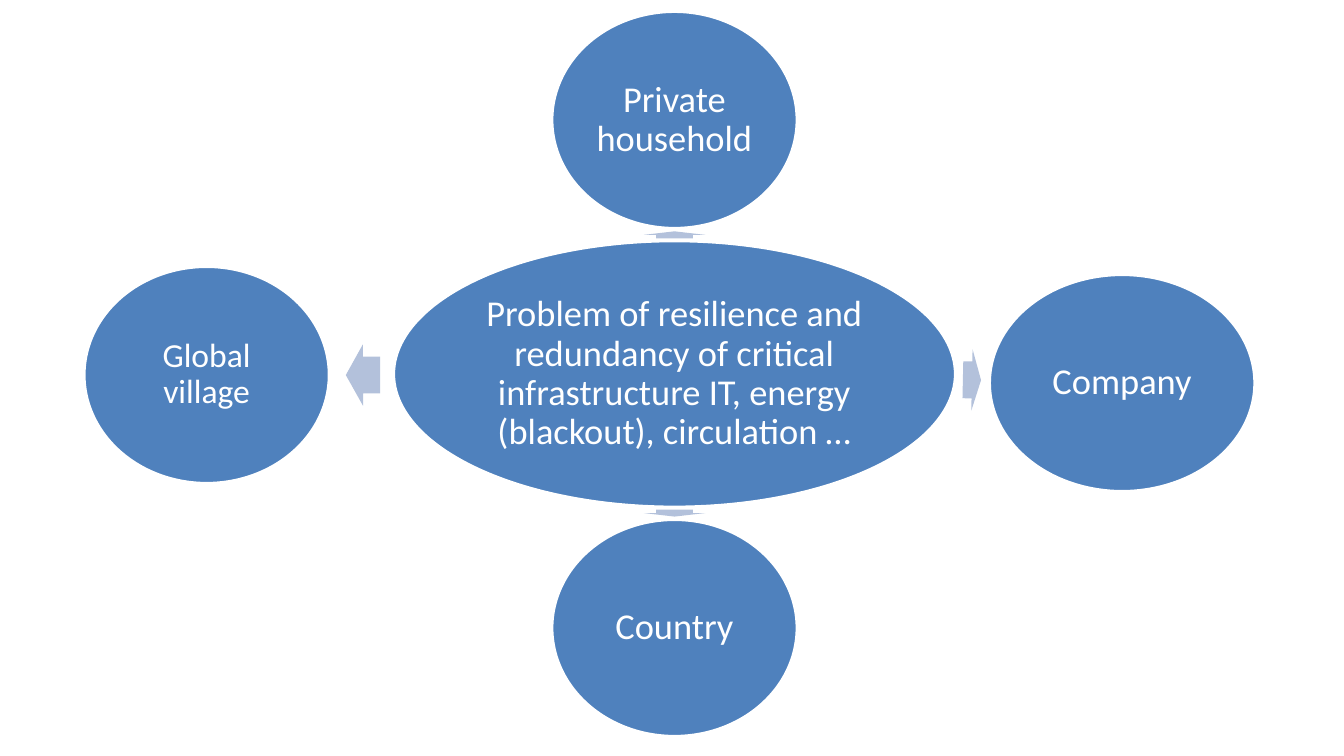
import dataclasses
import pptx
import pptx.util
import pptx.dml.color
import pptx.enum.shapes
import pptx.enum.text

Inches = pptx.util.Inches
Pt = pptx.util.Pt
Kind = pptx.enum.shapes.MSO_SHAPE


@dataclasses.dataclass(frozen=True)
class Theme:
    """Colours, font and type sizes of the slide."""
    blue: str = "4F81BD"
    pale: str = "B3C1DB"
    white: str = "FFFFFF"
    font: str = "Calibri"
    large: int = 26
    small: int = 24


THEME = Theme()


def paint(part, tone):
    """Fill a shape with a plain colour and drop its shadow."""
    part.shadow.inherit = False
    part.fill.solid()
    part.fill.fore_color.rgb = pptx.dml.color.RGBColor.from_string(tone)


def place(slide, kind, box):
    """Add a preset shape in a box given as centre x, centre y, width, height."""
    x, y, wide, high = box
    return slide.shapes.add_shape(
        kind, Inches(x - wide / 2), Inches(y - high / 2), Inches(wide), Inches(high))


def draw_node(slide, box, label, size=THEME.large):
    """Draw a labelled ellipse."""
    node = place(slide, Kind.OVAL, box)
    paint(node, THEME.blue)
    white = pptx.dml.color.RGBColor.from_string(THEME.white)
    node.line.color.rgb = white
    node.line.width = Pt(2)
    frame = node.text_frame
    frame.word_wrap = True
    frame.vertical_anchor = pptx.enum.text.MSO_ANCHOR.MIDDLE
    frame.margin_left = frame.margin_right = Inches(0.04)
    frame.margin_top = frame.margin_bottom = Inches(0.04)
    frame.text = label
    para = frame.paragraphs[0]
    para.alignment = pptx.enum.text.PP_ALIGN.CENTER
    para.line_spacing = 0.9
    font = para.runs[0].font
    font.name = THEME.font
    font.size = Pt(size)
    font.color.rgb = white


def draw_arrow(slide, box, turn):
    """Draw a pale block arrow turned clockwise from pointing right."""
    arrow = place(slide, Kind.RIGHT_ARROW, box)
    paint(arrow, THEME.pale)
    arrow.line.fill.background()
    arrow.adjustments[0] = 0.6
    arrow.adjustments[1] = 0.5
    arrow.rotation = turn


def draw_hub(slide, box):
    """Draw the central problem and the four areas around its centre."""
    x, y, wide, high = box
    draw_node(slide, box, "Problem of resilience and redundancy of critical "
              "infrastructure IT, energy (blackout), circulation …")
    areas = [
        ("Private household", 0, -2.52, 2.43, THEME.large, 0, -1.38, 0.07, 270),
        ("Company", 4.44, 0.09, 2.63, THEME.large, 2.95, 0.06, 0.18, 1.2),
        ("Country", 0, 2.52, 2.43, THEME.large, 0, 1.38, 0.07, 90),
        ("Global village", -4.64, 0.01, 2.43, THEME.small, -3.09, 0.01, 0.34, 179.9),
    ]
    for label, dx, dy, span, size, ax, ay, reach, turn in areas:
        draw_arrow(slide, (x + ax, y + ay, reach, 0.61), turn)
        draw_node(slide, (x + dx, y + dy, span, 2.15), label, size)


def main():
    """Build and save the slide."""
    deck = pptx.Presentation()
    deck.slide_width = Inches(13.33)
    deck.slide_height = Inches(7.5)
    slide = deck.slides.add_slide(deck.slide_layouts[6])
    draw_hub(slide, (6.69, 3.71, 5.57, 2.64))
    deck.save("out.pptx")


if __name__ == "__main__":
    main()
